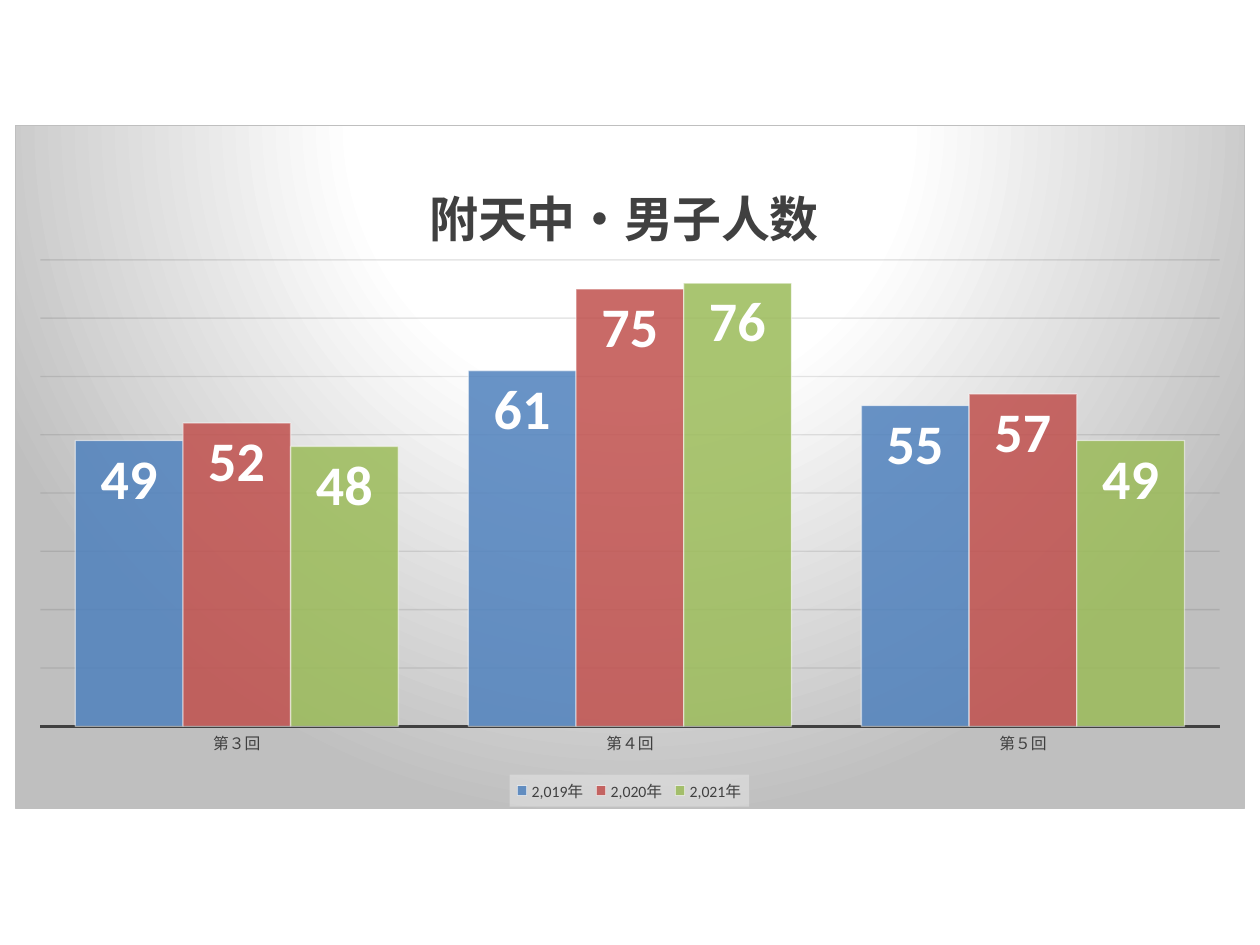
from lxml import etree
from pptx import Presentation
from pptx.chart.data import CategoryChartData
from pptx.dml.color import RGBColor
from pptx.enum.chart import (XL_CHART_TYPE, XL_LABEL_POSITION,
                             XL_LEGEND_POSITION, XL_TICK_MARK)
from pptx.oxml import parse_xml
from pptx.oxml.ns import qn
from pptx.util import Inches, Pt

FONT = "Calibri"
NO_TICKS = XL_TICK_MARK.NONE
INSIDE_END = XL_LABEL_POSITION.INSIDE_END
COLORS = {
    "text": "404040", "grid": "0D0D0D", "border": "BFBFBF",
    "white": "FFFFFF", "legend": "F2F2F2",
}
CATEGORIES = ["第３回", "第４回", "第５回"]
SERIES = [
    ("2,019年", (49, 61, 55), "4F81BD"),
    ("2,020年", (52, 75, 57), "C0504D"),
    ("2,021年", (48, 76, 49), "9BBB59"),
]
NAMESPACES = ('xmlns:c="http://schemas.openxmlformats.org/drawingml/2006/chart" '
              'xmlns:a="http://schemas.openxmlformats.org/drawingml/2006/main"')


def place(element, **shares):
    """Fix a chart part's position, as shares of the chart's size."""
    layout = element.find(qn("c:layout"))
    if layout is None:
        layout = etree.Element(qn("c:layout"))
        element.insert(0, layout)
    manual = etree.SubElement(layout, qn("c:manualLayout"))
    if element.tag == qn("c:plotArea"):
        etree.SubElement(manual, qn("c:layoutTarget"), val="inner")
    for side in "xy":
        etree.SubElement(manual, qn(f"c:{side}Mode"), val="edge")
    for name, share in shares.items():
        etree.SubElement(manual, qn(f"c:{name}"), val=str(share))


def set_opacity(color_format_parent, percent):
    for color in color_format_parent.iter(qn("a:srgbClr")):
        etree.SubElement(color, qn("a:alpha"), val=str(percent * 1000))


presentation = Presentation()
presentation.slide_width = Inches(10)
presentation.slide_height = Inches(7.5)
slide = presentation.slides.add_slide(presentation.slide_layouts[6])

chart_data = CategoryChartData()
chart_data.categories = CATEGORIES
for name, values, _ in SERIES:
    chart_data.add_series(name, values)
chart = slide.shapes.add_chart(
    XL_CHART_TYPE.COLUMN_CLUSTERED, Inches(0.12), Inches(0.99),
    Inches(9.76), Inches(5.43), chart_data).chart
chart.font.name = FONT
chart.font.size = Pt(10)

# Title
chart.has_title = True
title_frame = chart.chart_title.text_frame
title_frame.text = "附天中・男子人数"
title_font = title_frame.paragraphs[0].runs[0].font
title_font.name = FONT
title_font.size = Pt(28)
title_font.bold = True
title_font.color.rgb = RGBColor.from_string(COLORS["text"])
chart.chart_title.include_in_layout = False
place(chart.chart_title._element, x=0.33, y=0.06)

# Columns
plot = chart.plots[0]
plot.gap_width = 65
plot.overlap = 0
plot.vary_by_categories = False
for series, (_, _, color) in zip(plot.series, SERIES):
    series.format.fill.solid()
    series.format.fill.fore_color.rgb = RGBColor.from_string(color)
    set_opacity(series._element.spPr, 85)
    line = series.format.line
    line.width = Pt(0.75)
    line.color.rgb = RGBColor.from_string(COLORS["white"])
    set_opacity(line._ln, 50)
    labels = series.data_labels
    labels.show_value = True
    labels.position = INSIDE_END
    labels.font.name = FONT
    labels.font.size = Pt(32)
    labels.font.bold = True
    labels.font.color.rgb = RGBColor.from_string(COLORS["white"])
place(chart._chartSpace.chart.plotArea, x=0.02, y=0.197, w=0.96, h=0.683)

# Axes
category_axis = chart.category_axis
category_axis.major_tick_mark = NO_TICKS
category_axis.minor_tick_mark = NO_TICKS
category_axis.format.line.width = Pt(1.5)
category_axis.format.line.color.rgb = RGBColor.from_string(COLORS["text"])
value_axis = chart.value_axis
value_axis.minimum_scale = 0
value_axis.maximum_scale = 80
value_axis.major_unit = 10
value_axis.visible = False
grid_line = value_axis.major_gridlines.format.line
grid_line.width = Pt(0.75)
grid_line.color.rgb = RGBColor.from_string(COLORS["grid"])
set_opacity(grid_line._ln, 10)

# Legend
chart.has_legend = True
legend = chart.legend
legend.position = XL_LEGEND_POSITION.BOTTOM
legend.include_in_layout = False
for font in (category_axis.tick_labels.font, legend.font):
    font.name = FONT
    font.size = Pt(9)
    font.color.rgb = RGBColor.from_string(COLORS["text"])
place(legend._element, x=0.402, y=0.953, w=0.195, h=0.047)
legend._element.find(qn("c:overlay")).addnext(parse_xml(
    f'<c:spPr {NAMESPACES}><a:solidFill><a:srgbClr val="{COLORS["legend"]}">'
    '<a:alpha val="39000"/></a:srgbClr></a:solidFill></c:spPr>'))

# Chart background: white glow from above, fading to grey
stops = "".join(
    f'<a:gs pos="{position * 1000}"><a:srgbClr val="{COLORS[name]}"/></a:gs>'
    for position, name in ((0, "white"), (39, "white"), (100, "border")))
chart._chartSpace.chart.addnext(parse_xml(
    f'<c:spPr {NAMESPACES}><a:gradFill><a:gsLst>{stops}</a:gsLst>'
    '<a:path path="circle">'
    '<a:fillToRect l="50000" t="-80000" r="50000" b="180000"/></a:path></a:gradFill>'
    f'<a:ln w="{Pt(0.75)}"><a:solidFill><a:srgbClr val="{COLORS["border"]}"/>'
    '</a:solidFill></a:ln></c:spPr>'))

presentation.save("out.pptx")
